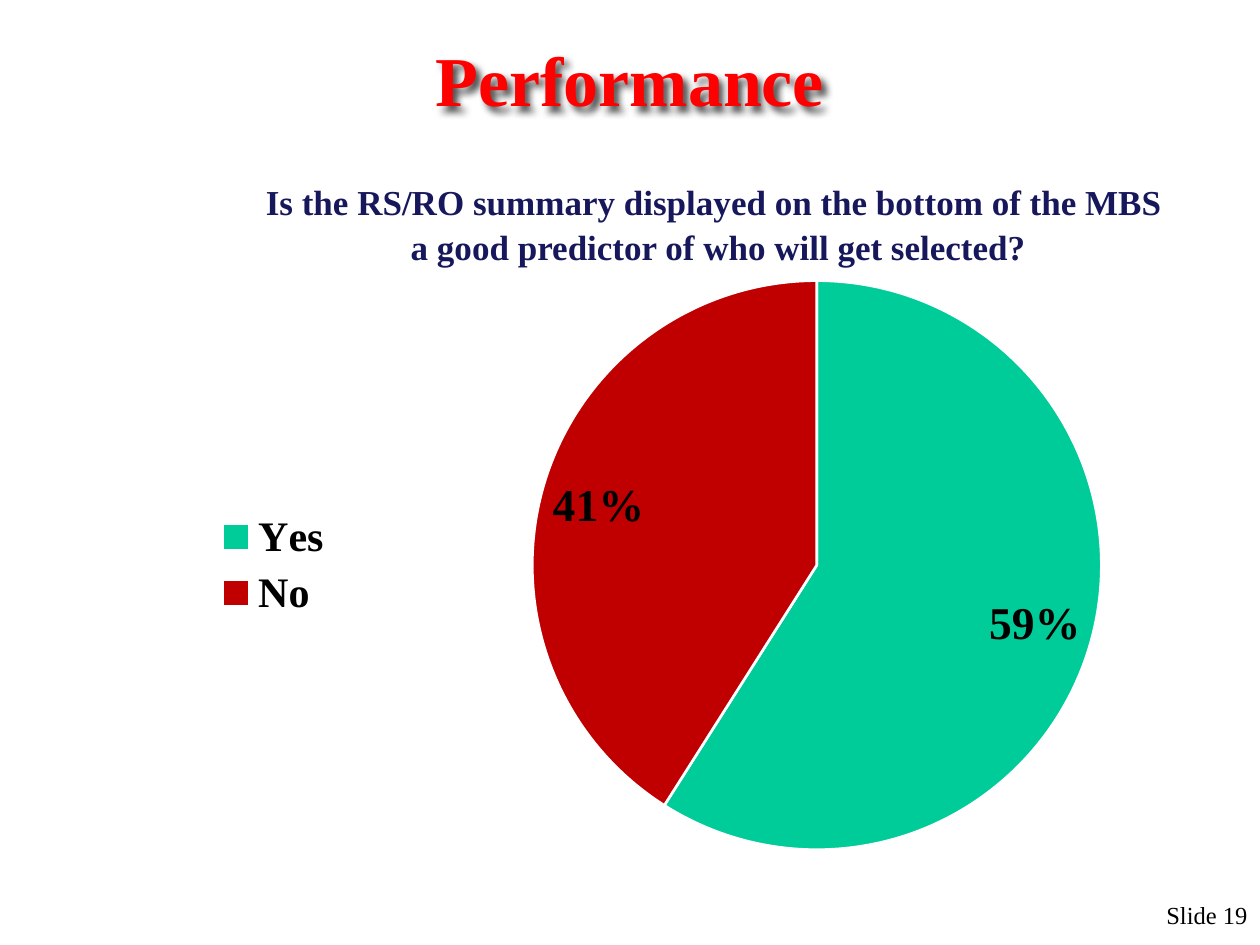
from lxml import etree
from pptx import Presentation
from pptx.chart.data import CategoryChartData
from pptx.dml.color import RGBColor
from pptx.enum import chart as ch, text
from pptx.oxml import parse_xml
from pptx.oxml.ns import nsdecls, qn
from pptx.util import Pt

COLORS = {"title": "FF0000", "question": "17175C", "text": "000000",
          "yes": "00CC99", "no": "C00000", "edge": "FFFFFF"}
ALIGN = text.PP_ALIGN


class SlideBuilder:
    """Holds the deck's style and the slide being built."""
    font_name = "Times New Roman"

    def __init__(self, prs):
        self.slide = prs.slides.add_slide(prs.slide_layouts[1])

    def color(self, key):
        return RGBColor.from_string(COLORS[key])

    def style(self, font, color, **formats):
        for name, value in {"name": self.font_name, **formats}.items():
            setattr(font, name, value)
        font.color.rgb = self.color(color)

    def place(self, sp, box):
        for name, value in zip(("left", "top", "width", "height"), box):
            setattr(sp, name, Pt(value))

    def fill_text(self, sp, lines, color, align, gap=0, frame=None, **formats):
        tf = sp.text_frame
        settings = {"word_wrap": True, "auto_size": text.MSO_AUTO_SIZE.NONE}
        for name, value in {**settings, **(frame or {})}.items():
            setattr(tf, name, value)
        for i, line in enumerate(lines):
            p = tf.add_paragraph() if i else tf.paragraphs[0]
            p.alignment = align
            p.space_before = Pt(gap if i else 0)
            pPr = p._p.get_or_add_pPr()
            pPr.set("marL", "0")
            pPr.set("indent", "0")
            etree.SubElement(pPr, qn("a:buNone"))
            r = p.add_run()
            r.text = line
            self.style(r.font, color, **formats)

    def title(self, line, box):
        sp = self.slide.shapes.title
        self.place(sp, box)
        self.fill_text(sp, [line], "title", ALIGN.CENTER, size=Pt(40), bold=True,
                       frame={"vertical_anchor": text.MSO_ANCHOR.MIDDLE})
        sp._element.spPr.append(parse_xml(
            f'<a:effectLst {nsdecls("a")}><a:outerShdw blurRad="50800" dist="38100" '
            'dir="2700000" algn="tl" rotWithShape="0"><a:srgbClr val="000000">'
            '<a:alpha val="70000"/></a:srgbClr></a:outerShdw></a:effectLst>'))

    def question(self, lines, box):
        sp = self.slide.placeholders[1]
        self.place(sp, box)
        self.fill_text(sp, lines, "question", ALIGN.CENTER, gap=1.6, size=Pt(20), bold=True,
                       frame={"margin_top": Pt(6), "vertical_anchor": text.MSO_ANCHOR.TOP})

    def slide_number(self, line, box):
        sp = self.slide.shapes.add_textbox(*map(Pt, box))
        self.fill_text(sp, [line], "text", ALIGN.RIGHT, size=Pt(14))

    def pie(self, values, box, layout):
        """Add a pie; layout is the plot's x, y, w, h as fractions of the chart."""
        data = CategoryChartData(number_format="0%")
        data.categories = list(values)
        data.add_series("Series 1", list(values.values()))
        chart = self.slide.shapes.add_chart(
            ch.XL_CHART_TYPE.PIE, *map(Pt, box), data).chart
        chart.has_title = False
        self.style(chart.font, "text", name="Arial", size=Pt(10))
        chart.has_legend = True
        chart.legend.position = ch.XL_LEGEND_POSITION.LEFT
        chart.legend.include_in_layout = False
        self.style(chart.legend.font, "text", size=Pt(24), bold=True)

        plot = chart.plots[0]
        plot.vary_by_categories = True
        for i, category in enumerate(values):
            fmt = plot.series[0].points[i].format
            fmt.fill.solid()
            fmt.fill.fore_color.rgb = self.color(category.lower())
            fmt.line.color.rgb = self.color("edge")
            fmt.line.width = Pt(1.5)
        labels = plot.series[0].data_labels
        formats = {"show_value": True, "show_percentage": False, "number_format": "0%",
                   "number_format_is_linked": False,
                   "position": ch.XL_LABEL_POSITION.BEST_FIT}
        for name, value in formats.items():
            setattr(labels, name, value)
        self.style(labels.font, "text", size=Pt(26), bold=True)

        area = chart._chartSpace.chart.plotArea
        for old in area.findall(qn("c:layout")):
            area.remove(old)
        sizes = "".join(f'<c:{k} val="{v}"/>' for k, v in zip("xywh", layout))
        area.insert(0, parse_xml(
            f'<c:layout {nsdecls("c")}><c:manualLayout><c:layoutTarget val="inner"/>'
            '<c:xMode val="edge"/><c:yMode val="edge"/>'
            f'{sizes}</c:manualLayout></c:layout>'))


def main():
    prs = Presentation()
    prs.slide_width, prs.slide_height = Pt(720), Pt(540)
    s = SlideBuilder(prs)
    s.title("Performance", (0, 24, 720, 42))
    s.question(["Is the RS/RO summary displayed on the bottom of the MBS",
                " a good predictor of who will get selected?"], (114, 97, 588, 53))
    s.slide_number("Slide 19", (548, 511, 172, 29))
    s.pie({"Yes": 0.59, "No": 0.41}, (114, 150, 630, 346), (0.3, 0.03, 0.52, 0.94))
    prs.save("out.pptx")


if __name__ == "__main__":
    main()
